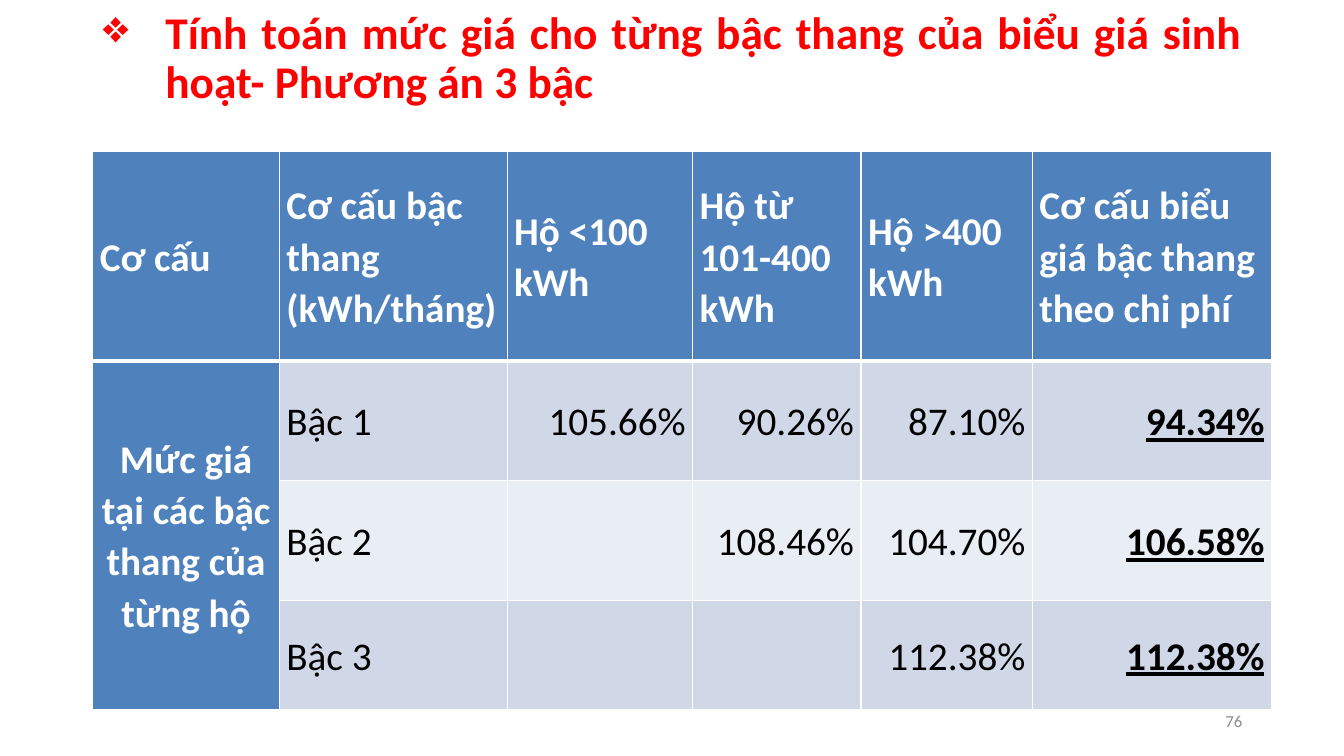
from lxml.etree import SubElement
from pptx import Presentation
from pptx.dml.color import RGBColor
from pptx.enum.text import MSO_ANCHOR as Anchor, MSO_AUTO_SIZE as AutoSize, PP_ALIGN as Align
from pptx.oxml.ns import qn
from pptx.util import Inches, Pt

COLORS = {"title": "FF0000", "header": "4F81BD", "odd": "D0D8E8", "even": "E9EDF4",
          "white": "FFFFFF", "text": "000000", "number": "8C8C8C"}
FONT = "Calibri"
COLUMN_WIDTHS = [1.85, 2.26, 1.84, 1.67, 1.7, 2.37]
ROW_HEIGHTS = [2.08, 1.19, 1.19, 1.08]
ROWS = [
    ["Cơ cấu", "Cơ cấu bậc thang (kWh/tháng)", "Hộ <100 kWh", "Hộ từ 101-400 kWh",
     "Hộ >400 kWh", "Cơ cấu biểu giá bậc thang theo chi phí"],
    ["Mức giá tại các bậc thang của từng hộ", "Bậc 1", "105.66%", "90.26%", "87.10%", "94.34%"],
    ["", "Bậc 2", "", "108.46%", "104.70%", "106.58%"],
    ["", "Bậc 3", "", "", "112.38%", "112.38%"],
]


def set_all(target, **values):
    for name, value in values.items():
        setattr(target, name, value)


def place(shape, box):
    set_all(shape, **dict(zip(("left", "top", "width", "height"), map(Inches, box))))


def write(frame, text, color, size, align=Align.LEFT, spacing=1.0, after=0, **font):
    """Fill a text frame with one formatted paragraph and return it."""
    frame.text = text
    paragraph = frame.paragraphs[0]
    set_all(paragraph, alignment=align, line_spacing=spacing, space_after=Pt(after))
    run_font = paragraph.runs[0].font
    set_all(run_font, name=FONT, size=Pt(size), **font)
    run_font.color.rgb = RGBColor.from_string(COLORS[color])
    return paragraph


def add_title(slide, box):
    title = slide.shapes.title
    place(title, box)
    frame = title.text_frame
    set_all(frame, auto_size=AutoSize.NONE, word_wrap=True, vertical_anchor=Anchor.MIDDLE)
    paragraph = write(frame, "Tính toán mức giá cho từng bậc thang của biểu giá sinh hoạt- Phương án 3 bậc",
                      "title", 32.4, Align.JUSTIFY, 0.9, bold=True)
    properties = paragraph._p.get_or_add_pPr()
    properties.set("marL", str(Inches(0.62)))
    properties.set("indent", str(-Inches(0.62)))
    SubElement(properties, qn("a:buChar"), char="❖")


def set_borders(cell, row):
    properties = cell._tc.get_or_add_tcPr()
    for side in "LRTB":
        thick = (side, row) in (("B", 0), ("T", 1))
        line = SubElement(properties, qn(f"a:ln{side}"), w=str(Pt(3 if thick else 1)))
        fill = SubElement(line, qn("a:solidFill"))
        SubElement(fill, qn("a:srgbClr"), val=COLORS["white"])


def format_cell(cell, text, row, column):
    is_header = row == 0 or column == 0
    is_value = not is_header and column > 1
    is_total = is_value and column == len(COLUMN_WIDTHS) - 1
    set_borders(cell, row)
    cell.fill.solid()
    fill = "header" if is_header else "odd" if row % 2 else "even"
    cell.fill.fore_color.rgb = RGBColor.from_string(COLORS[fill])
    set_all(cell, vertical_anchor=Anchor.MIDDLE, margin_left=Inches(0.07),
            margin_right=Inches(0.07), margin_top=0, margin_bottom=0)
    if text:
        align = Align.RIGHT if is_value else Align.CENTER if row and not column else Align.LEFT
        write(cell.text_frame, text, "white" if is_header else "text", 28, align, 1.07,
              8 if is_value else 0, bold=is_header or is_total, underline=is_total)


def add_price_table(slide, left, top):
    box = (left, top, sum(COLUMN_WIDTHS), sum(ROW_HEIGHTS))
    table = slide.shapes.add_table(len(ROWS), len(COLUMN_WIDTHS), *map(Inches, box)).table
    for column, width in zip(table.columns, COLUMN_WIDTHS):
        column.width = Inches(width)
    for row, height in zip(table.rows, ROW_HEIGHTS):
        row.height = Inches(height)
    for row, texts in enumerate(ROWS):
        for column, text in enumerate(texts):
            format_cell(table.cell(row, column), text, row, column)
    table.cell(1, 0).merge(table.cell(len(ROWS) - 1, 0))


def add_page_number(slide, box):
    frame = slide.shapes.add_textbox(*map(Inches, box)).text_frame
    set_all(frame, word_wrap=True, vertical_anchor=Anchor.MIDDLE)
    write(frame, "76", "number", 12, Align.RIGHT)


def main():
    presentation = Presentation()
    set_all(presentation, slide_width=Inches(13.33), slide_height=Inches(7.5))
    slide = presentation.slides.add_slide(presentation.slide_layouts[5])
    add_title(slide, (0.92, 0.19, 11.5, 0.79))
    add_price_table(slide, 0.92, 1.5)
    add_page_number(slide, (9.42, 6.95, 3, 0.4))
    presentation.save("out.pptx")


if __name__ == "__main__":
    main()
